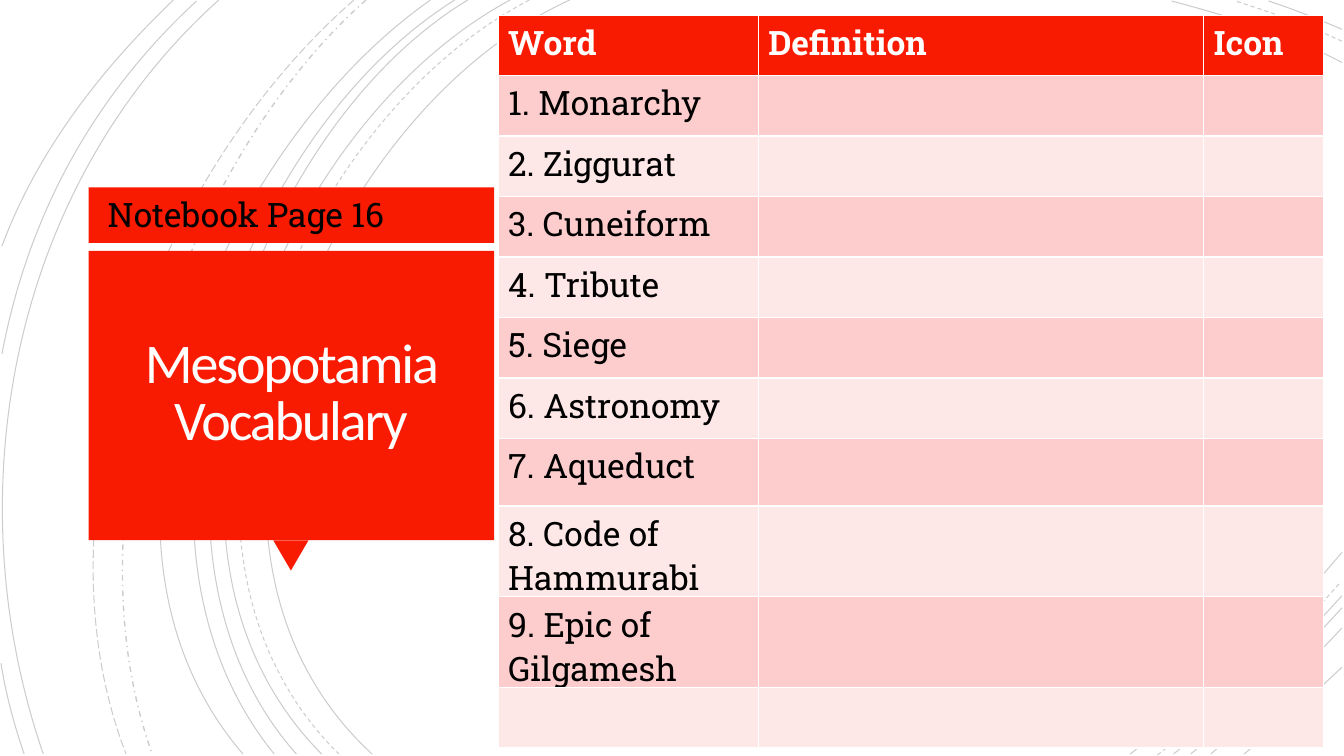
from lxml import etree
from pptx import Presentation
from pptx.dml.color import RGBColor
from pptx.enum.dml import MSO_LINE
from pptx.enum.shapes import MSO_SHAPE
from pptx.enum.text import MSO_ANCHOR, MSO_AUTO_SIZE, PP_ALIGN
from pptx.oxml.ns import qn
from pptx.util import Inches, Pt

SOLID, DASH = MSO_LINE.SOLID, MSO_LINE.DASH
LONG, DOT = MSO_LINE.LONG_DASH, MSO_LINE.DASH_DOT
RECT, TRIANGLE = MSO_SHAPE.RECTANGLE, MSO_SHAPE.ISOSCELES_TRIANGLE
MIDDLE, TOP = MSO_ANCHOR.MIDDLE, MSO_ANCHOR.TOP
CENTER = PP_ALIGN.CENTER
NO_FIT = MSO_AUTO_SIZE.NONE

RED, ROSE, PINK = "F81B02", "FCCDCC", "FEE8E7"
BLACK, WHITE, SOFT = "000000", "FFFFFF", "FFFEFF"
SLAB = "Roboto Slab"

# Start, two control points and end of each arc, then its dash
ARCS = [
    ((5.65, 0), (3.15, 1.15), (1.43, 5.4), (3.69, 7.48), SOLID),
    ((13.31, 0.62), (12.78, 0.34), (12.18, 0.16), (11.62, 0.01), SOLID),
    ((11.21, 7.48), (11.97, 6.9), (12.69, 6.22), (13.31, 5.48), SOLID),
    ((5.25, 0), (2.85, 1.25), (1.23, 5.37), (3.36, 7.48), DASH),
    ((13.31, 0.41), (12.97, 0.25), (12.6, 0.12), (12.25, 0.01), DASH),
    ((11.48, 7.49), (12.13, 6.98), (12.75, 6.4), (13.3, 5.77), DASH),
    ((5.06, 0), (2.7, 1.27), (1.1, 5.37), (3.19, 7.48), SOLID),
    ((13.31, 0.29), (13.07, 0.19), (12.83, 0.09), (12.58, 0.01), SOLID),
    ((11.64, 7.48), (12.23, 7.01), (12.8, 6.48), (13.31, 5.91), SOLID),
    ((4.64, 0), (2.44, 1.33), (1.1, 5.41), (2.94, 7.48), SOLID),
    ((11.81, 7.48), (12.34, 7.04), (12.84, 6.55), (13.31, 6.03), SOLID),
    ((4.51, 0), (2.31, 1.38), (0.97, 5.33), (2.72, 7.48), SOLID),
    ((12.01, 7.48), (12.46, 7.09), (12.9, 6.67), (13.31, 6.23), SOLID),
    ((4.27, 0), (2.17, 1.47), (0.53, 5.29), (2.41, 7.48), SOLID),
    ((12.34, 7.48), (12.67, 7.21), (12.99, 6.92), (13.31, 6.62), SOLID),
    ((3.63, 0), (1.76, 1.66), (0.65, 5.09), (1.51, 7.48), DOT),
    ((3.51, 0), (1.57, 1.69), (0.29, 4.99), (1.25, 7.48), LONG),
    ((2.17, 0), (0.11, 1.85), (-0.46, 4.9), (0.43, 7.48), SOLID),
    ((1.95, 0.01), (0.92, 0.96), (0.28, 2.14), (0.02, 3.51), SOLID),
    ((0.01, 6.58), (0.06, 6.89), (0.14, 7.19), (0.24, 7.48), SOLID),
    ((1.72, 0), (1, 0.69), (0.37, 1.5), (0.02, 2.44), SOLID),
]

HEADS = ["Word", "Definition", "Icon"]
WORDS = ["Monarchy", "Ziggurat", "Cuneiform", "Tribute", "Siege", "Astronomy",
         "Aqueduct", "Code of Hammurabi", "Epic of Gilgamesh"]
WIDTHS = [2.58, 4.42, 1.19]
HEIGHTS = [0.6] * 7 + [0.67, 0.89, 0.89, 0.6]


def color(code):
    return RGBColor.from_string(code)


def style(para, font, size, code, bold=False):
    para.font.name = font
    para.font.size = Pt(size)
    para.font.bold = bold
    para.font.color.rgb = color(code)


def add_arc(shapes, start, first, second, end, dash):
    """Draw a faint open Bezier curve."""
    points = [(Inches(x), Inches(y)) for x, y in (start, first, second, end)]
    pen = shapes.build_freeform(*points[0])
    pen.add_line_segments(points[1:], close=False)
    arc = pen.convert_to_shape()
    arc.shadow.inherit = False
    arc.fill.background()
    arc.line.color.rgb = color(BLACK)
    arc.line.width = Pt(1 if dash == DOT else 0.75)
    arc.line.dash_style = dash

    tint = arc.line._ln.find(".//" + qn("a:srgbClr"))
    etree.SubElement(tint, qn("a:alpha"), val="20000")
    # Turn the three straight segments into one cubic curve
    legs = list(arc._element.iter(qn("a:lnTo")))
    curve = etree.SubElement(legs[0].getparent(), qn("a:cubicBezTo"))
    for leg in legs:
        curve.append(leg[0])
        leg.getparent().remove(leg)


def add_block(shapes, kind, left, top, width, height):
    block = shapes.add_shape(kind, Inches(left), Inches(top), Inches(width), Inches(height))
    block.shadow.inherit = False
    block.fill.solid()
    block.fill.fore_color.rgb = color(RED)
    block.line.fill.background()
    return block


def add_panel(slide, left, top, width):
    """Place the page label and the title callout with its pointer."""
    shapes = slide.shapes
    add_block(shapes, RECT, left, top, width, 0.55)
    tip = add_block(shapes, TRIANGLE, left + 1.83, top + 3.5, 0.35, 0.3)
    tip.rotation = 180
    add_block(shapes, RECT, left, top + 0.63, width, 2.87)

    title = shapes.title
    shapes._spTree.append(title._element)
    title.left, title.top = Inches(left + 0.09), Inches(top + 0.71)
    title.width, title.height = Inches(3.83), Inches(2.69)
    frame = title.text_frame
    frame.text = "Mesopotamia Vocabulary"
    frame.word_wrap = True
    frame.auto_size = NO_FIT
    frame.vertical_anchor = MIDDLE
    frame.margin_left = frame.margin_right = Inches(0.25)
    frame.margin_top = frame.margin_bottom = Inches(0.25)
    para = frame.paragraphs[0]
    para.alignment = CENTER
    para.line_spacing = 0.85
    style(para, "Calibri", 40, SOFT)
    para.runs[0]._r.get_or_add_rPr().set("spc", "-150")

    label = shapes.add_textbox(Inches(left + 0.09), Inches(top + 0.01), Inches(3.83), Inches(0.5))
    label.text_frame.word_wrap = True
    label.text_frame.text = "Notebook Page 16"
    style(label.text_frame.paragraphs[0], SLAB, 24, BLACK)


def add_vocab(shapes, left, top):
    rows = [HEADS]
    rows += [[f"{n}. {word}", "", ""] for n, word in enumerate(WORDS, 1)]
    rows.append([""] * len(HEADS))
    table = shapes.add_table(len(rows), len(HEADS), Inches(left), Inches(top),
                             Inches(sum(WIDTHS)), Inches(sum(HEIGHTS))).table
    for column, width in zip(table.columns, WIDTHS):
        column.width = Inches(width)
    for r, row in enumerate(rows):
        table.rows[r].height = Inches(HEIGHTS[r])
        head = r == 0
        for c, text in enumerate(row):
            cell = table.cell(r, c)
            cell.text = text
            cell.vertical_anchor = TOP
            cell.fill.solid()
            cell.fill.fore_color.rgb = color(RED if head else ROSE if r % 2 else PINK)
            style(cell.text_frame.paragraphs[0], SLAB, 24, WHITE if head else BLACK, head)


def main():
    deck = Presentation()
    deck.slide_width, deck.slide_height = Inches(13.33), Inches(7.5)
    slide = deck.slides.add_slide(deck.slide_layouts.get_by_name("Title Only"))
    for arc in ARCS:
        add_arc(slide.shapes, *arc)
    add_panel(slide, 0.88, 1.86, 4.02)
    add_vocab(slide.shapes, 4.94, 0.15)
    deck.save("out.pptx")


if __name__ == "__main__":
    main()
